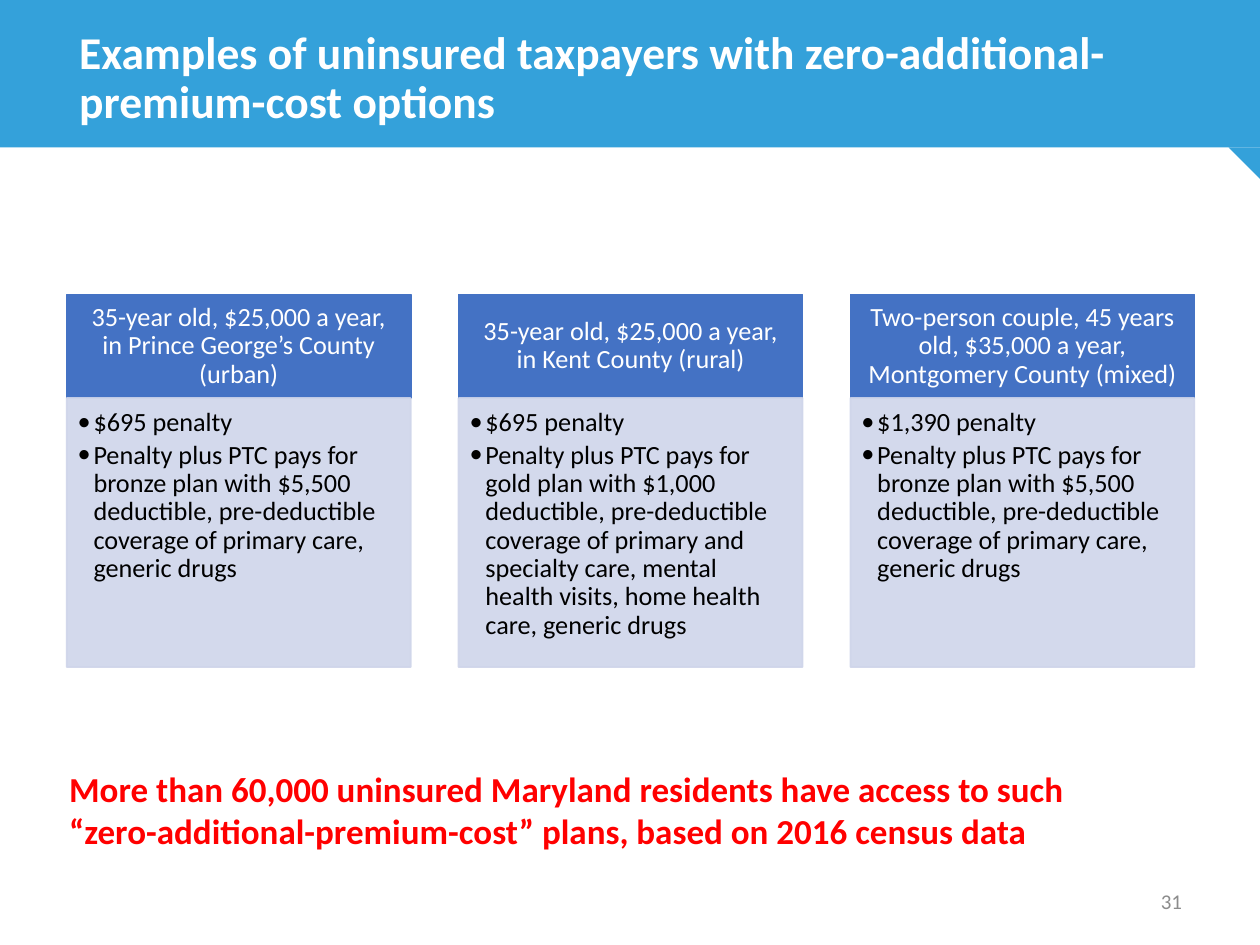
from lxml import etree
from pptx import Presentation
from pptx.dml.color import RGBColor
from pptx.enum.shapes import MSO_SHAPE
from pptx.enum.text import MSO_ANCHOR, PP_ALIGN
from pptx.oxml.ns import qn
from pptx.util import Pt

RECT, WEDGE = MSO_SHAPE.RECTANGLE, MSO_SHAPE.RIGHT_TRIANGLE
TOP, MIDDLE = MSO_ANCHOR.TOP, MSO_ANCHOR.MIDDLE
LEFT, CENTER, RIGHT = PP_ALIGN.LEFT, PP_ALIGN.CENTER, PP_ALIGN.RIGHT

SKY = RGBColor(0x34, 0xA1, 0xDA)
BLUE = RGBColor(0x44, 0x72, 0xC4)
PALE = RGBColor(0xCF, 0xD5, 0xEA)
WHITE = RGBColor(0xFF, 0xFF, 0xFF)
BLACK = RGBColor(0, 0, 0)
RED = RGBColor(0xFF, 0, 0)
GRAY = RGBColor(0x8C, 0x8C, 0x8C)

# Content
TITLE = "Examples of uninsured taxpayers with zero-additional-premium-cost options"
BRONZE = ("Penalty plus PTC pays for bronze plan with $5,500 deductible, "
          "pre-deductible coverage of primary care, generic drugs")
GOLD = ("Penalty plus PTC pays for gold plan with $1,000 deductible, "
        "pre-deductible coverage of primary and specialty care, mental "
        "health visits, home health care, generic drugs")
CASES = [
    ("35-year old, $25,000 a year, in Prince George’s County (urban)",
     ["$695 penalty", BRONZE]),
    ("35-year old, $25,000 a year, in Kent County (rural)",
     ["$695 penalty", GOLD]),
    ("Two-person couple, 45 years old, $35,000 a year, Montgomery County (mixed)",
     ["$1,390 penalty", BRONZE]),
]
CLAIM = ("More than 60,000 uninsured Maryland residents have access to such "
         "“zero-additional-premium-cost” plans, based on 2016 census data")
PAGE = "31"

# Layout
WIDE, HIGH = 720, 540
BAND, FOLD = 84.24, 18
EDGE, STEP, CARD = 38.16, 223.92, 196.56
HEAD_TOP, HEAD_H, BODY_H = 168.3, 59.2, 153.7
INSET = (7.2, 3.6, 7.2, 3.6)

# Text formats
TITLE_FMT = {"size": Pt(26), "bold": True, "color": WHITE}
HEAD_FMT = {"size": Pt(15), "color": WHITE}
BODY_FMT = {"size": Pt(15), "color": BLACK}
CLAIM_FMT = {"size": Pt(20), "bold": True, "color": RED}
PAGE_FMT = {"size": Pt(12), "color": GRAY}


def add_box(slide, kind, place, color, alpha=None, edge=False):
    box = slide.shapes.add_shape(kind, *map(Pt, place))
    box.shadow.inherit = False
    fills = [box.fill]
    if edge:
        box.line.width = Pt(1)
        fills.append(box.line.fill)
    else:
        box.line.fill.background()
    for fill in fills:
        fill.solid()
        fill.fore_color.rgb = color
    if alpha:
        for tint in box._element.spPr.iter(qn("a:srgbClr")):
            etree.SubElement(tint, qn("a:alpha"), val=str(alpha * 1000))
    return box


def add_bullet(para):
    props = para._p.get_or_add_pPr()
    props.set("marL", str(Pt(9)))
    props.set("indent", str(Pt(-9)))
    etree.SubElement(props, qn("a:buFont"), typeface="Calibri")
    etree.SubElement(props, qn("a:buChar"), char="•")


def write(box, lines, fmt, inset=INSET, anchor=TOP, align=LEFT,
          space=1.0, after=0, bullet=False):
    frame = box.text_frame
    frame.word_wrap = True
    frame.vertical_anchor = anchor
    for side, gap in zip(("left", "top", "right", "bottom"), inset):
        setattr(frame, "margin_" + side, Pt(gap))
    for i, line in enumerate(lines):
        para = frame.add_paragraph() if i else frame.paragraphs[0]
        para.alignment = align
        para.line_spacing = space
        para.space_after = Pt(after)
        if bullet:
            add_bullet(para)
        run = para.add_run()
        run.text = line
        run.font.name = "Calibri"
        for key, value in fmt.items():
            if key == "color":
                run.font.color.rgb = value
            else:
                setattr(run.font, key, value)


def add_text(slide, place, line, fmt, **style):
    write(slide.shapes.add_textbox(*map(Pt, place)), [line], fmt, **style)


def main():
    deck = Presentation()
    deck.slide_width, deck.slide_height = Pt(WIDE), Pt(HIGH)
    slide = deck.slides.add_slide(deck.slide_layouts[6])

    # Title band with folded corner
    add_box(slide, RECT, (0, 0, WIDE, BAND), SKY)
    fold = add_box(slide, WEDGE, (WIDE - FOLD, BAND, FOLD, FOLD), SKY)
    fold.rotation = 180
    add_text(slide, (EDGE, 0, 632.16, 90.72), TITLE, TITLE_FMT,
             anchor=MIDDLE, space=0.9)

    # Case cards
    for i, (name, points) in enumerate(CASES):
        x = EDGE + i * STEP
        head = add_box(slide, RECT, (x, HEAD_TOP, CARD, HEAD_H), BLUE, edge=True)
        write(head, [name], HEAD_FMT, inset=(8.4, 4.8, 8.4, 4.8),
              anchor=MIDDLE, align=CENTER, space=0.9, after=5.25)
        body = add_box(slide, RECT, (x, HEAD_TOP + HEAD_H, CARD, BODY_H), PALE,
                       alpha=90, edge=True)
        write(body, points, BODY_FMT, inset=(6.3, 6.3, 8.4, 9.45),
              space=0.9, after=2.25, bullet=True)

    # Claim and page number
    add_text(slide, (32.4, 434.88, 607.68, 55.44), CLAIM, CLAIM_FMT)
    add_text(slide, (508.32, 500.4, 174.24, 28.8), PAGE, PAGE_FMT,
             anchor=MIDDLE, align=RIGHT)

    deck.save("out.pptx")


if __name__ == "__main__":
    main()
